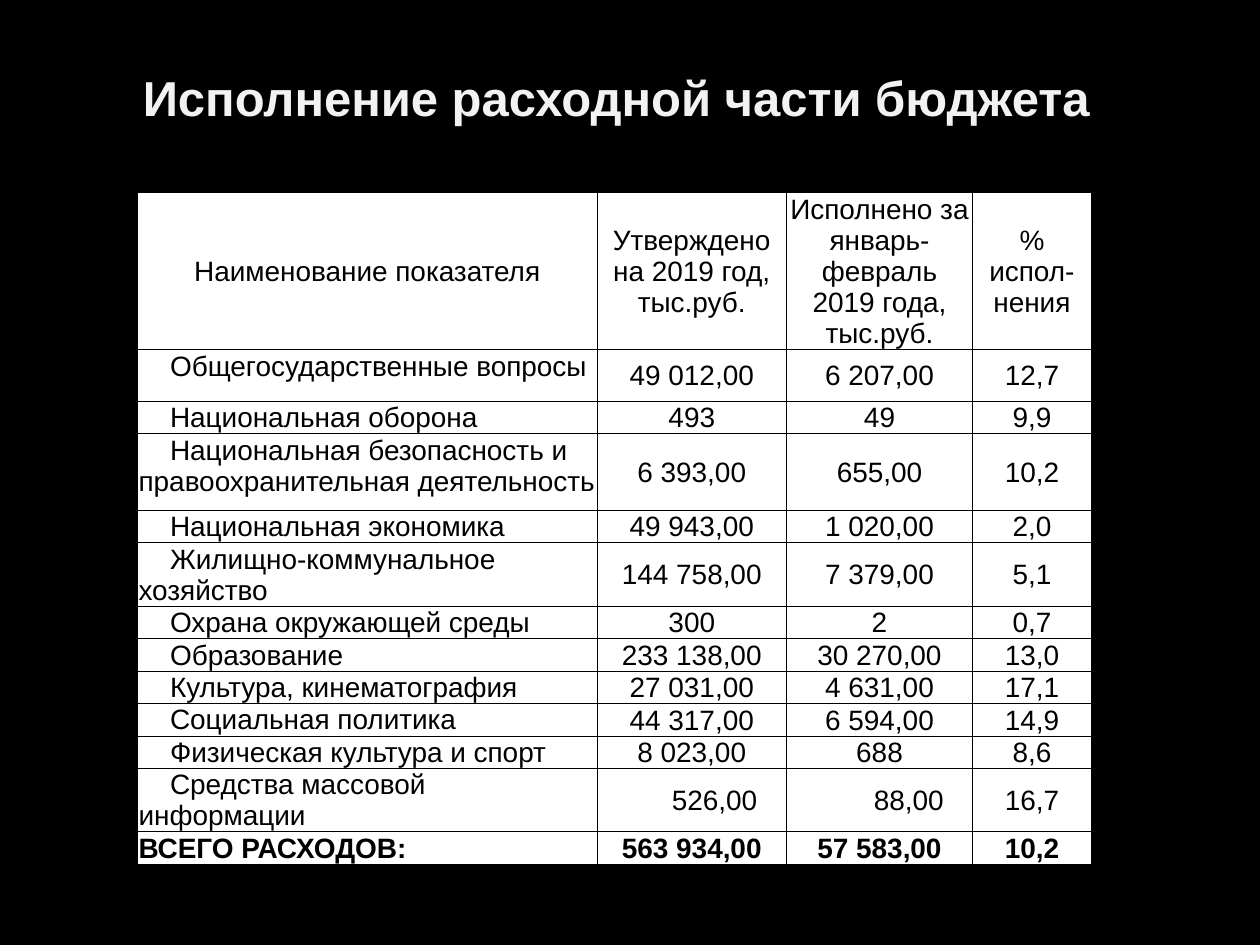
import pptx
import pptx.util
import pptx.dml.color
import pptx.enum.text
import pptx.oxml
import pptx.oxml.ns

Inches = pptx.util.Inches
Pt = pptx.util.Pt
ALIGN = pptx.enum.text.PP_ALIGN
ANCHOR = pptx.enum.text.MSO_ANCHOR

THEME = {
    "font": "Arial",
    "background": "000000",
    "title": "F2F2F2",
    "text": "000000",
    "cell": "FFFFFF",
    "border": "000000",
    "title_size": 28,
    "table_size": 16,
    "border_width": 0.5,
}

TITLE = "Исполнение расходной части бюджета"
HEADER = (
    "Наименование показателя",
    "Утверждено на 2019 год, тыс.руб.",
    "Исполнено за январь-февраль 2019 года, тыс.руб.",
    "% испол-нения",
)
EXPENSES = [
    ("Общегосударственные вопросы", "49 012,00", "6 207,00", "12,7"),
    ("Национальная оборона", "493", "49", "9,9"),
    ("Национальная безопасность и правоохранительная деятельность", "6 393,00", "655,00", "10,2"),
    ("Национальная экономика", "49 943,00", "1 020,00", "2,0"),
    ("Жилищно-коммунальное хозяйство", "144 758,00", "7 379,00", "5,1"),
    ("Охрана окружающей среды", "300", "2", "0,7"),
    ("Образование", "233 138,00", "30 270,00", "13,0"),
    ("Культура, кинематография", "27 031,00", "4 631,00", "17,1"),
    ("Социальная политика", "44 317,00", "6 594,00", "14,9"),
    ("Физическая культура и спорт", "8 023,00", "688", "8,6"),
    ("Средства массовой информации", "526,00", "88,00", "16,7"),
]
TOTAL = ("ВСЕГО РАСХОДОВ:", "563 934,00", "57 583,00", "10,2")
ROWS = [HEADER, *EXPENSES, TOTAL]
LAST = len(ROWS) - 1
RIGHT_ALIGNED = {(LAST - 1, 1), (LAST - 1, 2)}

COLUMN_WIDTHS = (3.65, 1.5, 1.48, 0.94)
LINE_HEIGHT = 0.2
TALL_ROWS = {0: 1.05, 1: 0.41, 3: 0.61, 5: 0.41, 11: 0.41}


def color(name):
    return pptx.dml.color.RGBColor.from_string(THEME[name])


def add_text(paragraph, text, size, color_name, bold):
    run = paragraph.add_run()
    run.text = text
    run.font.name = THEME["font"]
    run.font.size = Pt(THEME[size])
    run.font.bold = bold
    run.font.color.rgb = color(color_name)


def add_borders(cell):
    properties = cell._tc.get_or_add_tcPr()
    for index, side in enumerate(("lnL", "lnR", "lnT", "lnB")):
        line = pptx.oxml.parse_xml(
            f'<a:{side} {pptx.oxml.ns.nsdecls("a")} w="{Pt(THEME["border_width"])}">'
            f'<a:solidFill><a:srgbClr val="{THEME["border"]}"/></a:solidFill></a:{side}>'
        )
        properties.insert(index, line)


def fill_cell(cell, row, column, text):
    cell.margin_left = cell.margin_right = cell.margin_top = Inches(0.01)
    cell.margin_bottom = 0
    cell.vertical_anchor = ANCHOR.MIDDLE
    cell.fill.solid()
    cell.fill.fore_color.rgb = color("cell")
    add_borders(cell)
    paragraph = cell.text_frame.paragraphs[0]
    paragraph.alignment = ALIGN.CENTER
    if column == 0 and row > 0:
        paragraph.alignment = ALIGN.LEFT
        cell.vertical_anchor = ANCHOR.BOTTOM if row == LAST else ANCHOR.TOP
        if row < LAST:
            paragraph._p.get_or_add_pPr().set("indent", str(Inches(0.25)))
    if (row, column) in RIGHT_ALIGNED:
        paragraph.alignment = ALIGN.RIGHT
        cell.margin_right = Inches(0.23)
    add_text(paragraph, text, "table_size", "text", row == LAST)


def add_title(slide):
    title = slide.shapes.title
    title.left, title.top = Inches(0.5), Inches(0.29)
    title.width, title.height = Inches(9), Inches(0.96)
    frame = title.text_frame
    frame.word_wrap = True
    frame.vertical_anchor = ANCHOR.MIDDLE
    frame.margin_right = Inches(0.32)
    paragraph = frame.paragraphs[0]
    paragraph.alignment = ALIGN.CENTER
    add_text(paragraph, TITLE, "title_size", "title", True)


def add_budget_table(slide):
    heights = [TALL_ROWS.get(row, LINE_HEIGHT) for row in range(len(ROWS))]
    table = slide.shapes.add_table(
        len(ROWS), len(HEADER), Inches(1.09), Inches(1.53),
        Inches(sum(COLUMN_WIDTHS)), Inches(sum(heights)),
    ).table
    table.first_row = table.horz_banding = False
    for column, width in zip(table.columns, COLUMN_WIDTHS):
        column.width = Inches(width)
    for row, values in enumerate(ROWS):
        table.rows[row].height = Inches(heights[row])
        for column, text in enumerate(values):
            fill_cell(table.cell(row, column), row, column, text)


def main():
    presentation = pptx.Presentation()
    presentation.slide_width, presentation.slide_height = Inches(10), Inches(7.5)
    slide = presentation.slides.add_slide(presentation.slide_layouts[5])
    slide.background.fill.solid()
    slide.background.fill.fore_color.rgb = color("background")
    add_title(slide)
    add_budget_table(slide)
    presentation.save("out.pptx")


if __name__ == "__main__":
    main()
